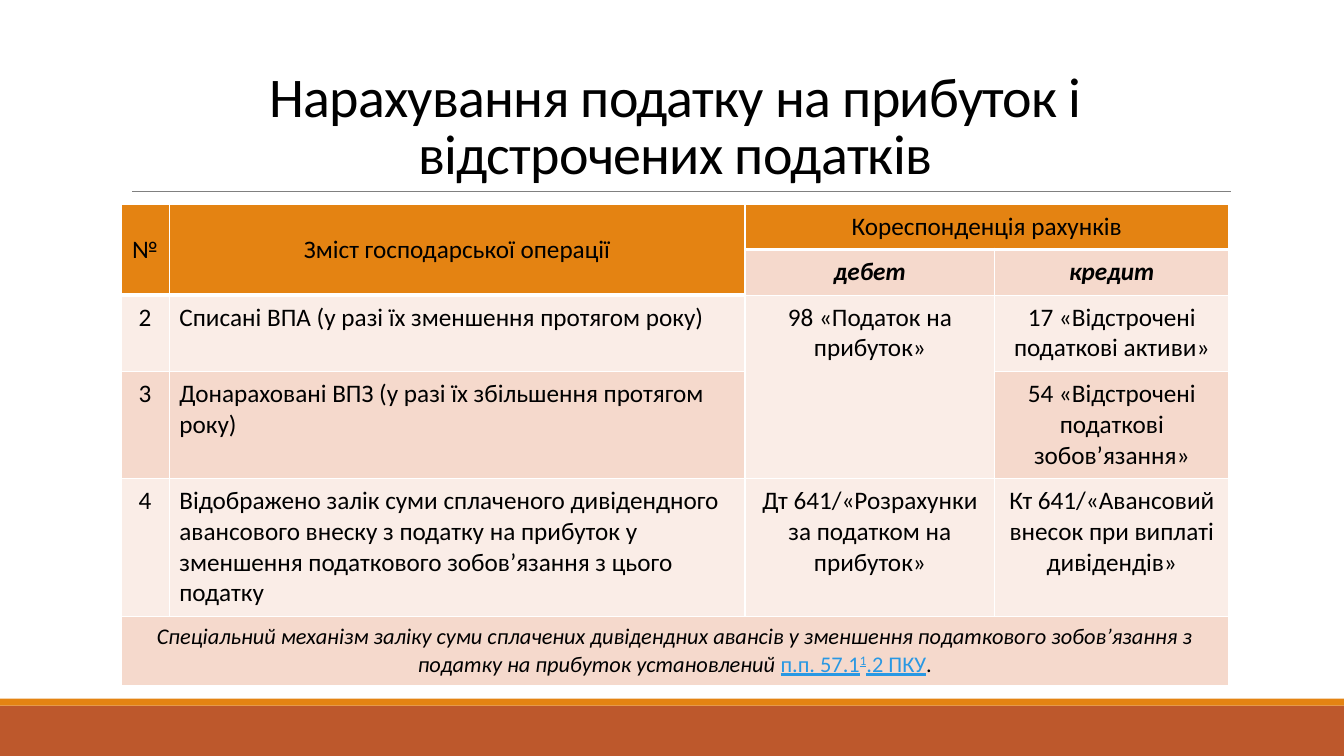
from pptx import Presentation
from pptx.dml.color import RGBColor
from pptx.enum.shapes import MSO_CONNECTOR, MSO_SHAPE
from pptx.enum.text import MSO_ANCHOR, PP_ALIGN
from pptx.oxml import parse_xml
from pptx.oxml.ns import nsdecls
from pptx.util import Inches, Pt

CENTER, LEFT = PP_ALIGN.CENTER, PP_ALIGN.LEFT
TOP, MIDDLE, BOTTOM = MSO_ANCHOR.TOP, MSO_ANCHOR.MIDDLE, MSO_ANCHOR.BOTTOM
RECTANGLE, STRAIGHT = MSO_SHAPE.RECTANGLE, MSO_CONNECTOR.STRAIGHT
FONT = "Calibri"
ORANGE, RUST, BLACK, LINK = "E48312", "BD582C", "000000", "2998E3"
BANDS = ["FAEDE7", "F5D9CC"]

deck = Presentation()
deck.slide_width, deck.slide_height = Inches(13.33), Inches(7.5)
page = deck.slides.add_slide(deck.slide_layouts[6])


def color(code):
    return RGBColor.from_string(code)


def place(left, top, width, height):
    across, down = deck.slide_width / 100, deck.slide_height / 100
    return [round(share * unit) for share, unit in
            zip((left, top, width, height), (across, down, across, down))]


for top, height, fill in [(93.33, 6.67, RUST), (92.4, 0.93, ORANGE)]:
    band = page.shapes.add_shape(RECTANGLE, *place(0, top, 100, height))
    band.shadow.inherit = False
    band.fill.solid()
    band.fill.fore_color.rgb = color(fill)
    band.line.fill.background()

rule = page.shapes.add_connector(STRAIGHT, *place(9.83, 25.33, 91.57, 25.33))
rule.line.color.rgb = color("808080")
rule.line.width = Pt(0.5)
rule._element.spPr.append(parse_xml(f"<a:effectLst {nsdecls('a')}/>"))

title = page.shapes.add_textbox(*place(9, 4.08, 82.5, 21.2)).text_frame
title.word_wrap = True
title.vertical_anchor = BOTTOM
para = title.paragraphs[0]
para.alignment = CENTER
para.line_spacing = 0.85
para.font.name, para.font.size = FONT, Pt(40)
para.font.color.rgb = color(BLACK)
span = para.add_run()
span.text = "Нарахування податку на прибуток і відстрочених податків"
span._r.get_or_add_rPr().set("spc", "-50")

ROWS = [
    ["№", "Зміст господарської операції", "Кореспонденція рахунків", ""],
    ["", "", "дебет", "кредит"],
    ["2", "Списані ВПА (у разі їх зменшення протягом року)",
     "98 «Податок на прибуток»", "17 «Відстрочені податкові активи»"],
    ["3", "Донараховані ВПЗ (у разі їх збільшення протягом року)",
     "", "54 «Відстрочені податкові зобов’язання»"],
    ["4", "Відображено залік суми сплаченого дивідендного авансового внеску з податку "
     "на прибуток у зменшення податкового зобов’язання з цього податку",
     "Дт 641/«Розрахунки за податком на прибуток»",
     "Кт 641/«Авансовий внесок при виплаті дивідендів»"],
    ["", "", "", ""],
]
COLUMN_SHARES = [3.6, 42.83, 18.6, 17.4]
ROW_SHARES = [5.93, 6.05, 10.13, 14.13, 18.2, 9.2]
MERGES = [(0, 0, 1, 0), (0, 1, 1, 1), (0, 2, 0, 3), (2, 2, 3, 2), (5, 0, 5, 3)]
LAST = len(ROWS) - 1

table = page.shapes.add_table(len(ROWS), len(COLUMN_SHARES), *place(
    9, 27.07, sum(COLUMN_SHARES), sum(ROW_SHARES))).table
table.first_row = table.horz_banding = False
for column, share in zip(table.columns, COLUMN_SHARES):
    column.width = round(deck.slide_width * share / 100)
for row, share in zip(table.rows, ROW_SHARES):
    row.height = round(deck.slide_height * share / 100)
for first_row, first_column, last_row, last_column in MERGES:
    table.cell(first_row, first_column).merge(table.cell(last_row, last_column))

for row, texts in enumerate(ROWS):
    for column, text in enumerate(texts):
        cell = table.cell(row, column)
        header = row == 0 or (row == 1 and column < 2)
        cell.margin_left = cell.margin_right = Inches(0.1)
        cell.margin_top = cell.margin_bottom = Inches(0.07)
        cell.vertical_anchor = MIDDLE if row in (0, 1, LAST) else TOP
        cell.fill.solid()
        cell.fill.fore_color.rgb = color(ORANGE if header else BANDS[row % 2])
        for index, side in enumerate("LRTB"):
            weight = Pt(3 if header and side == "B" else 1)
            cell._tc.get_or_add_tcPr().insert(index, parse_xml(
                f'<a:ln{side} {nsdecls("a")} w="{weight}"><a:solidFill>'
                f'<a:srgbClr val="FFFFFF"/></a:solidFill></a:ln{side}>'))
        para = cell.text_frame.paragraphs[0]
        para.alignment = LEFT if column == 1 and 1 < row < LAST else CENTER
        para.font.name = FONT
        para.font.size = Pt(16 if row == LAST else 18)
        para.font.color.rgb = color(BLACK)
        para.font.bold = para.font.italic = row == 1
        if text:
            para.add_run().text = text

NOTE = [
    ("Спеціальний механізм заліку суми сплачених дивідендних авансів у зменшення "
     "податкового зобов’язання з податку на прибуток установлений ", True, False, 0),
    ("п.п. 57.1", False, True, 0),
    ("1", False, True, 30000),
    (".2 ПКУ", False, True, 0),
    (".", False, False, 0),
]
para = table.cell(LAST, 0).text_frame.paragraphs[0]
for text, italic, linked, baseline in NOTE:
    span = para.add_run()
    span.text = text
    span.font.italic = italic
    span.font.underline = linked
    span.font.color.rgb = color(LINK if linked else BLACK)
    if baseline:
        span._r.get_or_add_rPr().set("baseline", str(baseline))

deck.save("out.pptx")
